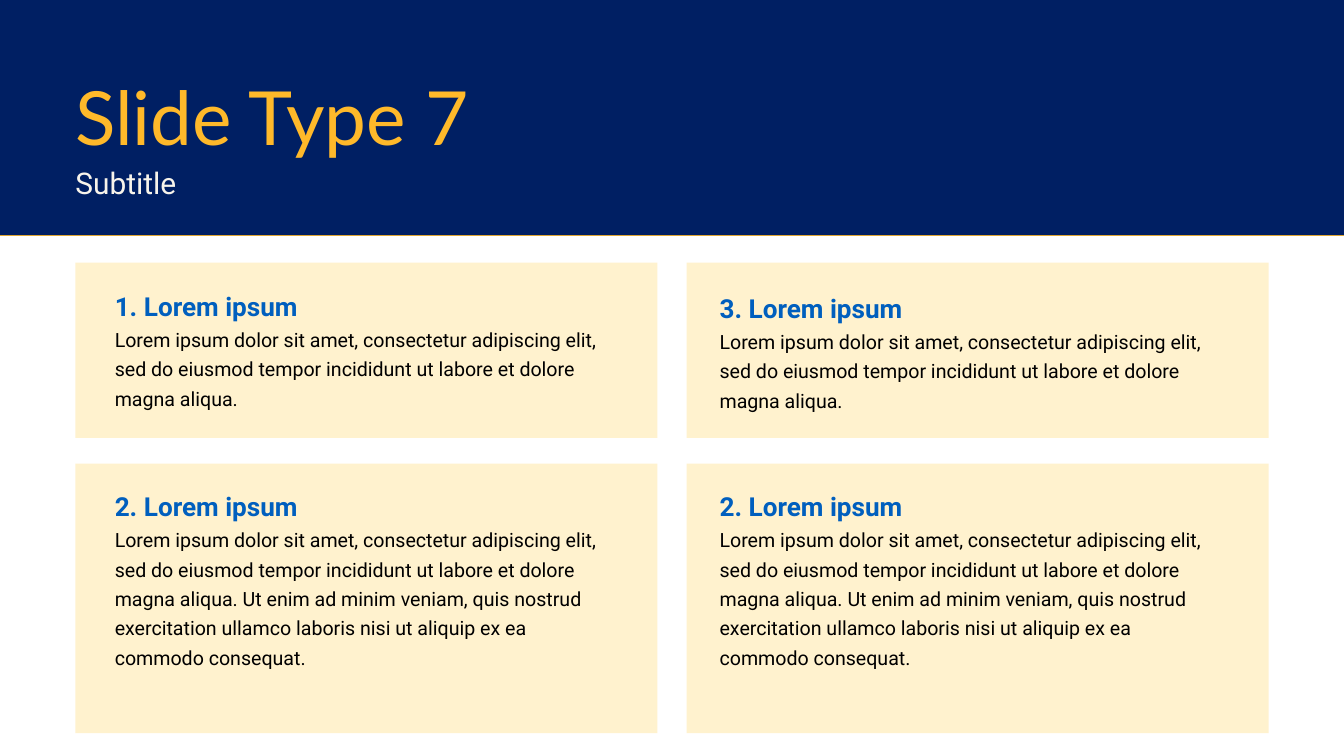
from dataclasses import dataclass

from pptx import Presentation
from pptx.dml.color import RGBColor
from pptx.enum.shapes import MSO_CONNECTOR, MSO_SHAPE
from pptx.enum.text import MSO_AUTO_SIZE, PP_ALIGN
from pptx.oxml.ns import qn
from pptx.util import Cm, Pt

RECTANGLE = MSO_SHAPE.RECTANGLE
STRAIGHT = MSO_CONNECTOR.STRAIGHT
GROW = MSO_AUTO_SIZE.SHAPE_TO_FIT_TEXT
LEFT, JUSTIFY = PP_ALIGN.LEFT, PP_ALIGN.JUSTIFY


@dataclass(frozen=True)
class Theme:
    navy: str = "001F63"
    gold: str = "FFB92A"
    cream: str = "FFF2CE"
    blue: str = "005FBE"
    ivory: str = "F8F4EB"
    black: str = "000000"
    title: int = 80
    subtitle: int = 32
    heading: int = 28
    body: int = 21


THEME = Theme()
TITLE = {"name": "Lato", "size": THEME.title, "color": THEME.gold, "bold": False,
         "spacing": 88, "alignment": LEFT}
SUBTITLE = {"name": "Roboto", "size": THEME.subtitle, "color": THEME.ivory, "bold": False,
            "spacing": 38.4, "alignment": JUSTIFY}
HEADING = {"name": "Roboto", "size": THEME.heading, "color": THEME.blue, "bold": True,
           "spacing": 42, "alignment": LEFT}
BODY = {"name": "Roboto", "size": THEME.body, "color": THEME.black, "bold": False,
        "spacing": 31.5, "alignment": LEFT}

PAGE_WIDTH, PAGE_HEIGHT = 50.8, 28.58
BAND_HEIGHT = 8.89
MARGIN = 2.85
CARD_WIDTH = 22
CARD_LEFTS = (MARGIN, PAGE_WIDTH - MARGIN - CARD_WIDTH)
TEXT_LEFTS = (4.34, 27.2)
TEXT_WIDTH = 19.02

SHORT = ("Lorem ipsum dolor sit amet, consectetur adipiscing elit, "
         "sed do eiusmod tempor incididunt ut labore et dolore magna aliqua.")
LONG = SHORT + (" Ut enim ad minim veniam, quis nostrud exercitation ullamco "
                "laboris nisi ut aliquip ex ea commodo consequat.")

deck = Presentation()
deck.slide_width, deck.slide_height = Cm(PAGE_WIDTH), Cm(PAGE_HEIGHT)
page = deck.slides.add_slide(deck.slide_layouts[6])


def add_panel(left, top, width, height, color):
    panel = page.shapes.add_shape(RECTANGLE, Cm(left), Cm(top), Cm(width), Cm(height))
    panel.shadow.inherit = False
    panel.fill.solid()
    panel.fill.fore_color.rgb = RGBColor.from_string(color)
    panel.line.fill.background()


def add_text(left, top, width, height, lines):
    """Add a text box without insets; lines holds (text, style) pairs."""
    box = page.shapes.add_textbox(Cm(left), Cm(top), Cm(width), Cm(height))
    frame = box.text_frame
    frame_format = {"word_wrap": True, "auto_size": GROW, "margin_left": 0,
                    "margin_top": 0, "margin_right": 0, "margin_bottom": 0}
    for attribute, value in frame_format.items():
        setattr(frame, attribute, value)
    for index, (text, style) in enumerate(lines):
        para = frame.add_paragraph() if index else frame.paragraphs[0]
        para.alignment = style["alignment"]
        para.line_spacing = Pt(style["spacing"])
        span = para.add_run()
        span.text = text
        font_format = {"name": style["name"], "size": Pt(style["size"]), "bold": style["bold"]}
        for attribute, value in font_format.items():
            setattr(span.font, attribute, value)
        span.font.color.rgb = RGBColor.from_string(style["color"])


# Header: the band covers the upper half of the rule
rule = page.shapes.add_connector(STRAIGHT, 0, Cm(BAND_HEIGHT), Cm(PAGE_WIDTH), Cm(BAND_HEIGHT))
rule.line.color.rgb = RGBColor.from_string(THEME.gold)
rule.line.width = Pt(2.25)
rule_properties = rule.element.find(qn("p:spPr"))
rule_properties.append(rule_properties.makeelement(qn("a:effectLst"), {}))

add_panel(0, 0, PAGE_WIDTH, BAND_HEIGHT, THEME.navy)
add_text(MARGIN, 2.95, 30.25, 3.63, [("Slide Type 7", TITLE)])
add_text(MARGIN, 6.22, PAGE_WIDTH - 2 * MARGIN, 1.37, [("Subtitle", SUBTITLE)])

# Cards: top, height, text tops, text height, headings, body
CARD_ROWS = [
    (9.93, 6.63, (10.69, 10.77), 4.75, ("1. Lorem ipsum", "3. Lorem ipsum"), SHORT),
    (17.53, 10.19, (18.26, 18.26), 6.96, ("2. Lorem ipsum", "2. Lorem ipsum"), LONG),
]
for top, height, text_tops, text_height, headings, body in CARD_ROWS:
    for card_left, text_left, text_top, heading in zip(CARD_LEFTS, TEXT_LEFTS, text_tops, headings):
        add_panel(card_left, top, CARD_WIDTH, height, THEME.cream)
        add_text(text_left, text_top, TEXT_WIDTH, text_height, [(heading, HEADING), (body, BODY)])

deck.save("out.pptx")
